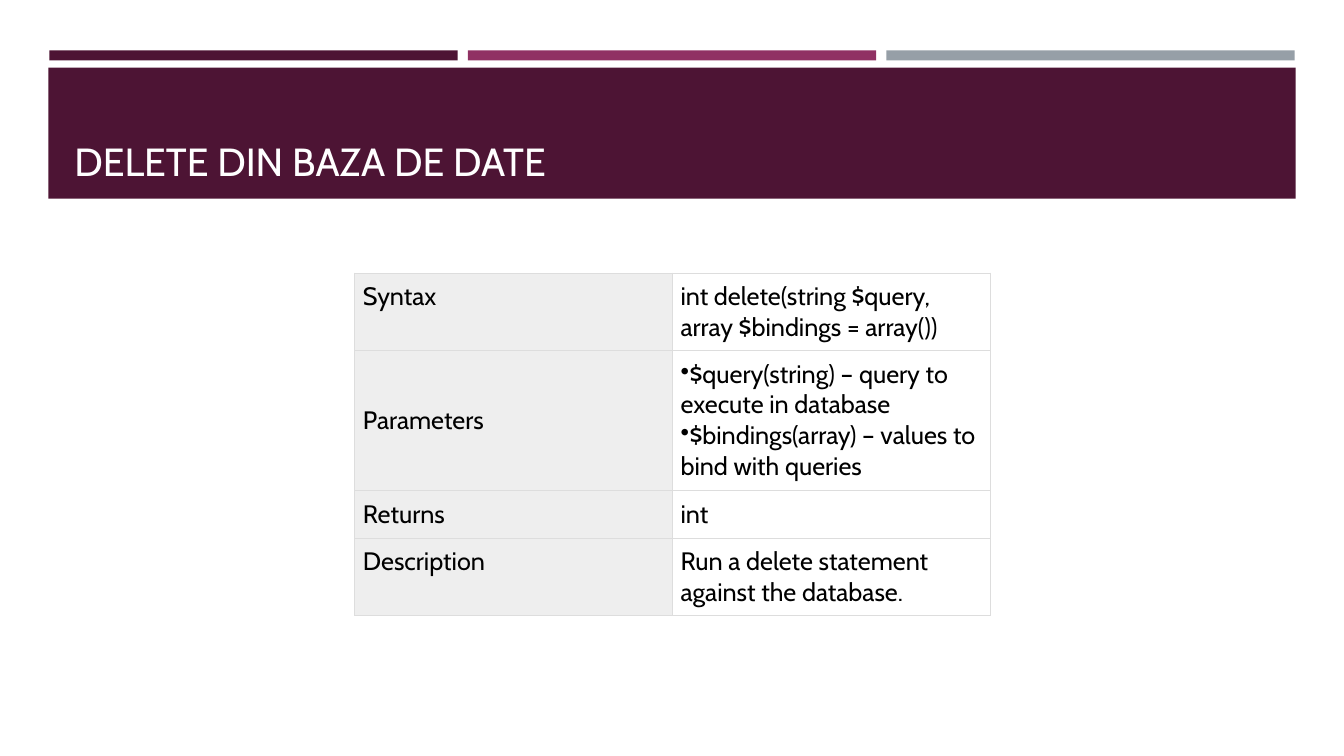
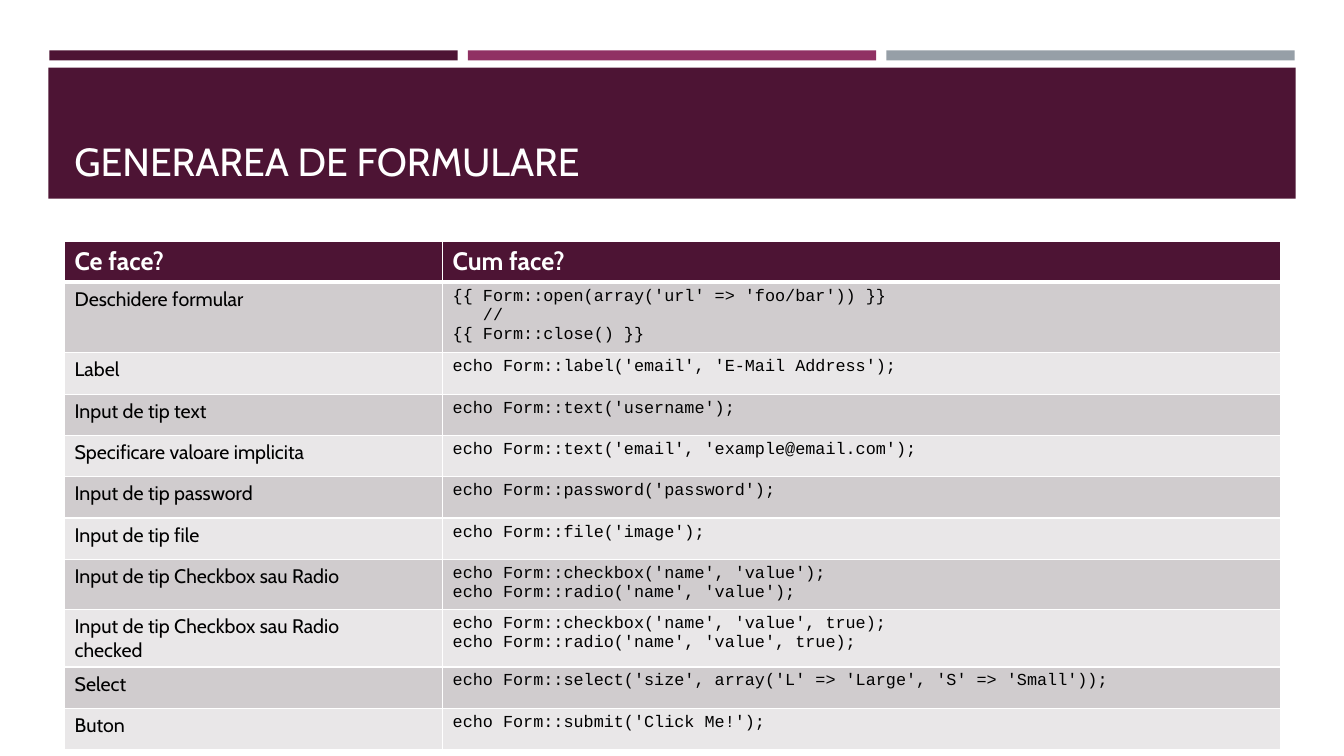
import pptx
import pptx.util
import pptx.dml.color
import pptx.enum.shapes
import pptx.enum.text
from dataclasses import dataclass
from lxml import etree
from pptx.util import Inches, Pt


@dataclass(frozen=True)
class Theme:
    plum: str = "4D1434"
    magenta: str = "903163"
    steel: str = "969FA7"
    white: str = "FFFFFF"
    black: str = "000000"
    label_fill: str = "EEEEEE"
    label_border: str = "DDDDDD"
    dark_row: str = "D0CCCE"
    light_row: str = "E9E7E8"
    body_font: str = "Cabin"
    code_font: str = "Courier New"
    title_size: int = 28
    large_size: int = 18
    body_size: int = 14
    code_size: int = 12


T = Theme()
ANCHOR = pptx.enum.text.MSO_ANCHOR
A = "{http://schemas.openxmlformats.org/drawingml/2006/main}"

DELETE_TITLE = "DELETE DIN BAZA DE DATE"
# label, description lines, row height in inches
DELETE_ROWS = [
    ("Syntax", ["int delete(string $query, array $bindings = array())"], 0.77),
    ("Parameters", ["$query(string) – query to execute in database",
                    "$bindings(array) – values to bind with queries"], 1.39),
    ("Returns", ["int"], 0.47),
    ("Description", ["Run a delete statement against the database."], 0.77),
]

FORM_TITLE = "GENERAREA DE FORMULARE"
FORM_HEADER = ("Ce face?", "Cum face?")
FORM_ROWS = [
    (["Deschidere formular"], ["{{ Form::open(array('url' => 'foo/bar')) }}",
                               "//",
                               "{{ Form::close() }}"]),
    (["Label"], ["echo Form::label('email', 'E-Mail Address');"]),
    (["Input de tip text"], ["echo Form::text('username');"]),
    (["Specificare valoare implicita"],
     ["echo Form::text('email', 'example@email.com');"]),
    (["Input de tip password"], ["echo Form::password('password');"]),
    (["Input de tip file"], ["echo Form::file('image');"]),
    (["Input de tip Checkbox sau Radio"],
     ["echo Form::checkbox('name', 'value');",
      "echo Form::radio('name', 'value');"]),
    (["Input de tip Checkbox sau Radio", "checked"],
     ["echo Form::checkbox('name', 'value', true);",
      "echo Form::radio('name', 'value', true);"]),
    (["Select"],
     ["echo Form::select('size', array('L' => 'Large', 'S' => 'Small'));"]),
    (["Buton"], ["echo Form::submit('Click Me!');"]),
]


def rgb(color):
    return pptx.dml.color.RGBColor.from_string(color)


def write(tf, lines, size, color=T.black, font=T.body_font, bold=False):
    tf.text = "\n".join(lines)
    for p in tf.paragraphs:
        for r in p.runs:
            r.font.size = Pt(size)
            r.font.name = font
            r.font.bold = bold
            r.font.color.rgb = rgb(color)


def add_band(s, left, top, width, height, color):
    sp = s.shapes.add_shape(pptx.enum.shapes.MSO_SHAPE.RECTANGLE,
                            Inches(left), Inches(top),
                            Inches(width), Inches(height))
    sp.shadow.inherit = False
    sp.fill.solid()
    sp.fill.fore_color.rgb = rgb(color)
    sp.line.fill.background()


def add_titled_slide(prs, title):
    s = prs.slides.add_slide(prs.slide_layouts[6])
    for i, color in enumerate((T.plum, T.magenta, T.steel)):
        add_band(s, 0.49 + i * 4.15, 0.5, 4.05, 0.1, color)
    add_band(s, 0.48, 0.67, 12.37, 1.3, T.plum)
    box = s.shapes.add_textbox(Inches(0.64), Inches(0.77),
                               Inches(12.06), Inches(1.11))
    tf = box.text_frame
    tf.word_wrap = True
    tf.vertical_anchor = ANCHOR.BOTTOM
    write(tf, [title], T.title_size, T.white)
    return s


def add_plain_table(s, left, top, widths, heights):
    """Add a table without banding, with the given sizes in inches."""
    table = s.shapes.add_table(len(heights), len(widths),
                               Inches(left), Inches(top),
                               Inches(sum(widths)),
                               Inches(sum(heights))).table
    table.first_row = table.horz_banding = False
    for column, width in zip(table.columns, widths):
        column.width = Inches(width)
    for row, height in zip(table.rows, heights):
        row.height = Inches(height)
    return table


def style_cell(cell, fill, border, width, **side_widths):
    """Set borders, then fill; side_widths (L, R, T, B) override the width."""
    tc_pr = cell._tc.get_or_add_tcPr()
    for side in "LRTB":
        ln = etree.SubElement(tc_pr, f"{A}ln{side}",
                              w=str(Pt(side_widths.get(side, width))))
        solid = etree.SubElement(ln, f"{A}solidFill")
        etree.SubElement(solid, f"{A}srgbClr", val=border)
    if fill:
        cell.fill.solid()
        cell.fill.fore_color.rgb = rgb(fill)
    else:
        cell.fill.background()


def add_bullet(p):
    p_pr = p._p.get_or_add_pPr()
    p_pr.set("marL", "0")
    p_pr.set("indent", "0")
    etree.SubElement(p_pr, f"{A}buChar", char="•")


def build_delete_slide(prs):
    s = add_titled_slide(prs, DELETE_TITLE)
    table = add_plain_table(s, 3.52, 2.71, (3.15, 3.15),
                            [height for *_, height in DELETE_ROWS])
    for i, (label, lines, _) in enumerate(DELETE_ROWS):
        columns = (([label], T.label_fill), (lines, None))
        for j, (text, fill) in enumerate(columns):
            cell = table.cell(i, j)
            cell.margin_left = cell.margin_right = Inches(0.08)
            cell.margin_top = cell.margin_bottom = Inches(0.08)
            write(cell.text_frame, text, T.large_size)
            style_cell(cell, fill, T.label_border, 0.75)
            if len(text) > 1:
                for p in cell.text_frame.paragraphs:
                    add_bullet(p)
        if len(lines) > 1:
            table.cell(i, 0).vertical_anchor = ANCHOR.MIDDLE


def build_form_slide(prs):
    s = add_titled_slide(prs, FORM_TITLE)
    table = add_plain_table(s, 0.64, 2.39, (3.75, 8.31),
                            [0.41] * (len(FORM_ROWS) + 1))
    for j, heading in enumerate(FORM_HEADER):
        cell = table.cell(0, j)
        write(cell.text_frame, [heading], T.large_size, T.white, bold=True)
        style_cell(cell, T.plum, T.white, 1, B=3)
    for i, (purpose, code) in enumerate(FORM_ROWS, start=1):
        write(table.cell(i, 0).text_frame, purpose, T.body_size)
        write(table.cell(i, 1).text_frame, code, T.code_size,
              font=T.code_font)
        for cell in table.rows[i].cells:
            style_cell(cell, T.dark_row if i % 2 else T.light_row,
                       T.white, 1, T=3 if i == 1 else 1)
        for p in table.cell(i, 1).text_frame.paragraphs:
            if p.text == "//":
                p._p.get_or_add_pPr().set("marL", str(Inches(0.3)))


def main():
    prs = pptx.Presentation()
    prs.slide_width = Inches(13.33)
    prs.slide_height = Inches(7.5)
    build_delete_slide(prs)
    build_form_slide(prs)
    prs.save("out.pptx")


if __name__ == "__main__":
    main()
